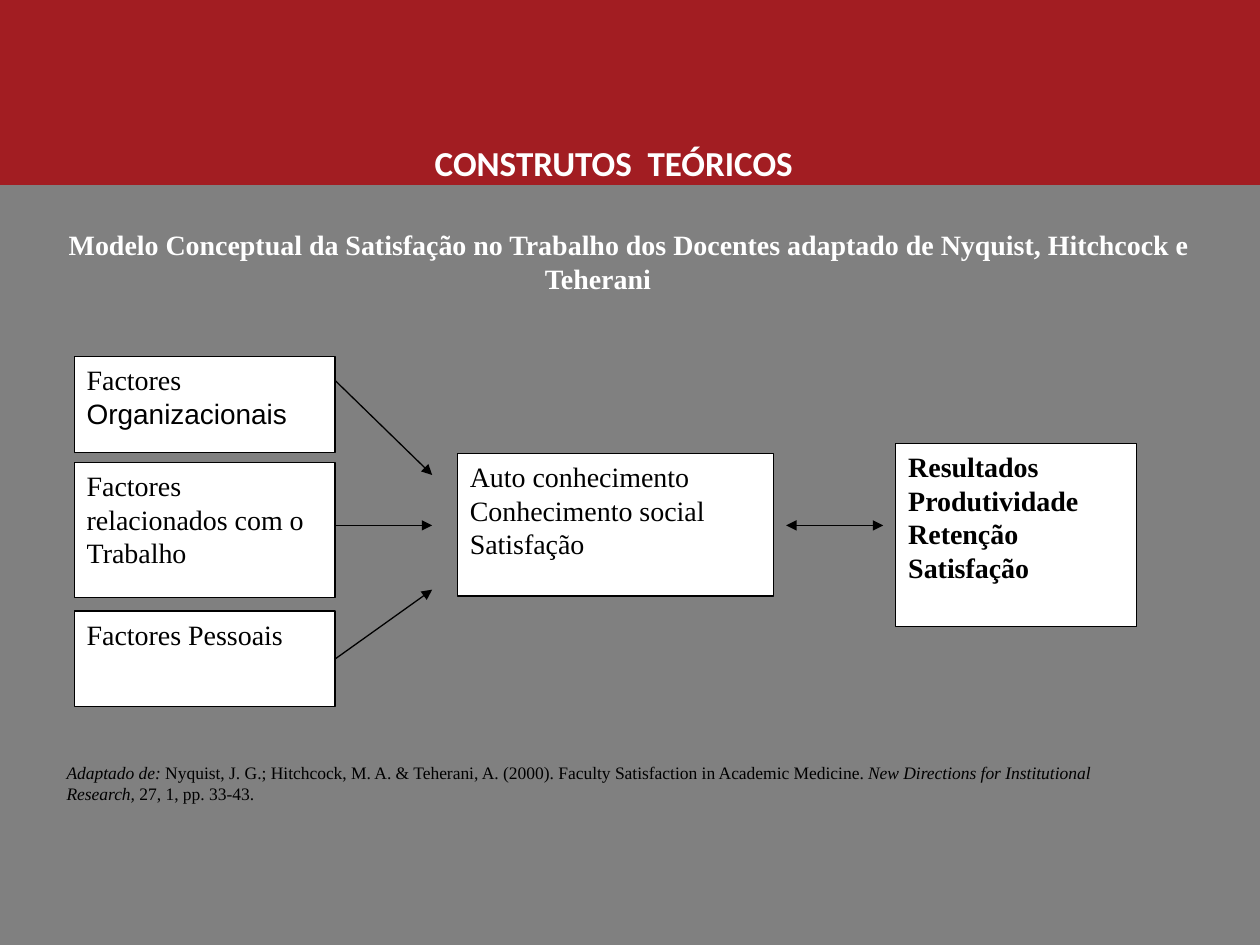
from pptx import Presentation
from pptx import util as u
from pptx.dml.color import RGBColor
from pptx.enum import shapes, text
from pptx.oxml import parse_xml
from pptx.oxml.ns import nsdecls, qn

WIDE, HIGH = 10, 7.5
BAND = 1.47
LEFT, COL = 0.59, 2.07
EDGE = LEFT + COL
GAP = 0.77
MID = 4.17
SERIF = "Times New Roman"


def paint(fmt, hue):
    """Give a fill a solid colour."""
    fmt.solid()
    fmt.fore_color.rgb = RGBColor.from_string(hue)


def write(shape, paras, size=16, font=SERIF, hue="000000", bold=False,
          align=text.PP_ALIGN.LEFT, wrap=True, anchor=text.MSO_ANCHOR.TOP,
          side=0.1, foot=0.05, indent=0):
    """Fill a shape with paragraphs, each a list of (text, format) runs."""
    frame = shape.text_frame
    frame.auto_size = text.MSO_AUTO_SIZE.NONE
    frame.word_wrap, frame.vertical_anchor = wrap, anchor
    frame.margin_left = frame.margin_right = u.Inches(side)
    frame.margin_top, frame.margin_bottom = u.Inches(0.05), u.Inches(foot)
    for i, runs in enumerate(paras):
        para = frame.add_paragraph() if i else frame.paragraphs[0]
        para.alignment = align
        if indent:
            para._p.get_or_add_pPr().set("indent", str(u.Inches(indent)))
        for words, look in runs:
            run = para.add_run()
            run.text = words
            run.font.size, run.font.bold = u.Pt(size), bold
            run.font.name = look.get("font", font)
            run.font.italic = look.get("italic", False)
            run.font.color.rgb = RGBColor.from_string(hue)


def block(slide, x, y, w, h, hue, line=None):
    """Add a flat rectangle, outlined if a line colour is given."""
    rect = slide.shapes.add_shape(shapes.MSO_SHAPE.RECTANGLE,
                                  *map(u.Inches, (x, y, w, h)))
    rect.shadow.inherit = False
    paint(rect.fill, hue)
    if line:
        paint(rect.line.fill, line)
        rect.line.width = u.Pt(0.75)
    else:
        rect.line.fill.background()
    return rect


def box(slide, x, y, w, h, paras, **look):
    """Add a white model box with its text."""
    rect = block(slide, x, y, w, h, "FFFFFF", "000000")
    write(rect, paras, **look)
    return rect


def note(slide, x, y, w, h, paras, **look):
    """Add a plain text box."""
    area = slide.shapes.add_textbox(*map(u.Inches, (x, y, w, h)))
    write(area, paras, **look)


def arrow(slide, x, y, end, ends=("tailEnd",), start=None):
    """Draw an arrow one gap wide, joined to the right side of start."""
    line = slide.shapes.add_connector(
        shapes.MSO_CONNECTOR.STRAIGHT, *map(u.Inches, (x, y, x + GAP, end)))
    if start is not None:
        line.begin_connect(start, 3)
    paint(line.line.fill, "000000")
    line.line.width = u.Pt(0.75)
    props = line._element.spPr
    for tag in ends:
        props.find(qn("a:ln")).append(
            parse_xml(f'<a:{tag} {nsdecls("a")} type="triangle"/>'))
    props.append(parse_xml(f'<a:effectLst {nsdecls("a")}/>'))


def lines(*rows):
    """Turn plain strings into one-run paragraphs."""
    return [[(row, {})] for row in rows]


def head(slide):
    """Set the coloured bands and the title upon them."""
    title = slide.shapes.title
    bands = [block(slide, 0, 0, WIDE, BAND, "A21D22"),
             block(slide, 0, BAND, WIDE, HIGH - BAND, "808080")]
    for band in bands:
        title.element.addprevious(band.element)
    title.left, title.top, title.width, title.height = map(
        u.Inches, (3.35, 1.07, 3.07, 0.44))
    write(title, lines("CONSTRUTOS  TEÓRICOS"), size=20, font="Calibri",
          hue="FFFFFF", bold=True, wrap=False)


def model(slide):
    """Draw the factor, process and result boxes and their arrows."""
    box(slide, LEFT, 2.83, COL, 0.76,
        [[("Factores", {}), (" Organizacionais", {"font": "Arial"})]])
    box(slide, LEFT, 3.67, COL, 1.07,
        lines("Factores relacionados com o Trabalho"))
    own = box(slide, LEFT, 4.85, COL, 0.76, lines("Factores Pessoais"))
    box(slide, 3.63, 3.6, 2.51, 1.13,
        lines("Auto conhecimento", "Conhecimento social", "Satisfação"))
    box(slide, 7.11, 3.52, 1.91, 1.45,
        lines("Resultados", "Produtividade", "Retenção", "Satisfação"),
        bold=True)
    arrow(slide, EDGE, 3.02, 3.77)
    arrow(slide, EDGE, MID, MID)
    arrow(slide, EDGE, 5.23, 4.68, start=own)
    arrow(slide, 6.24, MID, MID, ends=("headEnd", "tailEnd"))


def main():
    """Build and save the slide."""
    deck = Presentation()
    deck.slide_width, deck.slide_height = u.Inches(WIDE), u.Inches(HIGH)
    slide = deck.slides.add_slide(deck.slide_layouts[5])
    head(slide)
    model(slide)
    note(slide, -0.51, 1.76, 10.51, 0.91,
         lines("Modelo Conceptual da Satisfação no Trabalho dos Docentes "
               "adaptado de Nyquist, Hitchcock e Teherani"),
         hue="FFFFFF", bold=True, align=text.PP_ALIGN.CENTER, side=0.2,
         indent=0.49)
    slant = {"italic": True}
    note(slide, 0.43, 5.38, 8.43, 1.35,
         [[("Adaptado de:", slant),
           (" Nyquist, J. G.; Hitchcock, M. A. & Teherani, A. (2000). "
            "Faculty Satisfaction in Academic Medicine. ", {}),
           ("New Directions for Institutional Research, ", slant),
           ("27, 1, pp. 33-43.", {})]],
         size=10, anchor=text.MSO_ANCHOR.BOTTOM, foot=0.35)
    deck.save("out.pptx")


if __name__ == "__main__":
    main()
